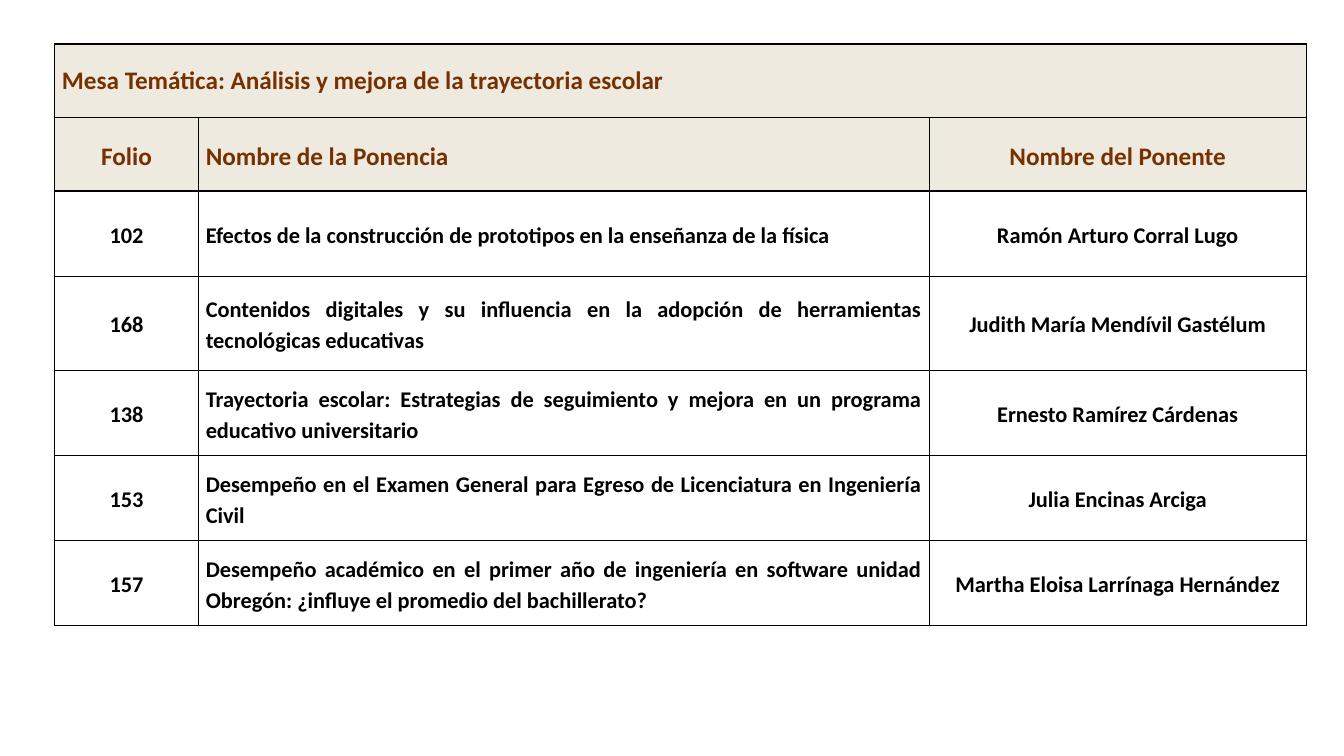
from lxml import etree
from pptx import Presentation
from pptx import util as u
from pptx.dml import color
from pptx.enum import text
from pptx.oxml import ns

EMU_PER_PX = 9525
COLUMN_WIDTHS = [137, 696, 359]
ROW_HEIGHTS = [70, 70, 81, 90, 81, 81, 81]
ALIGNMENTS = [text.PP_ALIGN.CENTER, text.PP_ALIGN.JUSTIFY, text.PP_ALIGN.CENTER]
HEADER = {"size": 18, "color": "773000", "fill": "EFEADF", "spacing": 1.15}
BODY = {"size": 16, "color": "000000", "fill": None, "spacing": 1.14}

TOPIC = "Mesa Temática: Análisis y mejora de la trayectoria escolar"
HEADINGS = ("Folio", "Nombre de la Ponencia", "Nombre del Ponente")
TALKS = [
    ("102", "Efectos de la construcción de prototipos en la enseñanza de la física",
     "Ramón Arturo Corral Lugo"),
    ("168", "Contenidos digitales y su influencia en la adopción de herramientas "
     "tecnológicas educativas", "Judith María Mendívil Gastélum"),
    ("138", "Trayectoria escolar: Estrategias de seguimiento y mejora en un programa "
     "educativo universitario", "Ernesto Ramírez Cárdenas"),
    ("153", "Desempeño en el Examen General para Egreso de Licenciatura en Ingeniería Civil",
     "Julia Encinas Arciga"),
    ("157", "Desempeño académico en el primer año de ingeniería en software unidad "
     "Obregón: ¿influye el promedio del bachillerato?",
     "Martha Eloisa Larrínaga Hernández"),
]


def px(n):
    return u.Emu(n * EMU_PER_PX)


def rgb(value):
    return color.RGBColor.from_string(value)


def set_attributes(target, values):
    for name, value in values.items():
        setattr(target, name, value)


def add_borders(cell, line_color):
    props = cell._tc.get_or_add_tcPr()
    for i, side in enumerate(("lnL", "lnR", "lnT", "lnB")):
        line = etree.Element(ns.qn(f"a:{side}"), w=str(u.Pt(1)))
        fill = etree.SubElement(line, ns.qn("a:solidFill"))
        etree.SubElement(fill, ns.qn("a:srgbClr"), val=line_color)
        props.insert(i, line)


def format_cell(cell, style):
    set_attributes(cell, {
        "vertical_anchor": text.MSO_ANCHOR.MIDDLE,
        "margin_left": px(7), "margin_right": px(7),
        "margin_top": 0, "margin_bottom": 0,
    })
    if style["fill"]:
        cell.fill.solid()
        cell.fill.fore_color.rgb = rgb(style["fill"])
    else:
        cell.fill.background()
    add_borders(cell, "000000")


def write_cell(cell, words, style, alignment, spacing):
    p = cell.text_frame.paragraphs[0]
    set_attributes(p, {"alignment": alignment, "line_spacing": spacing})
    r = p.add_run()
    r.text = words
    set_attributes(r.font, {"name": "Calibri", "size": u.Pt(style["size"]), "bold": True})
    r.font.color.rgb = rgb(style["color"])


def add_program(s):
    frame = s.shapes.add_table(
        len(ROW_HEIGHTS), len(COLUMN_WIDTHS), px(52), px(42),
        px(sum(COLUMN_WIDTHS)), px(sum(ROW_HEIGHTS)))
    table = frame.table
    set_attributes(table, {"first_row": False, "horz_banding": False})
    for column, width in zip(table.columns, COLUMN_WIDTHS):
        column.width = px(width)
    for i, (row, height) in enumerate(zip(table.rows, ROW_HEIGHTS)):
        row.height = px(height)
        for cell in row.cells:
            format_cell(cell, HEADER if i < 2 else BODY)

    topic = table.cell(0, 0)
    topic.merge(table.cell(0, 2))
    write_cell(topic, TOPIC, HEADER, text.PP_ALIGN.JUSTIFY, None)
    for i, entries in enumerate([HEADINGS, *TALKS], start=1):
        style = HEADER if i == 1 else BODY
        for j, words in enumerate(entries):
            write_cell(table.cell(i, j), words, style, ALIGNMENTS[j], style["spacing"])


def main():
    prs = Presentation()
    set_attributes(prs, {"slide_width": px(1280), "slide_height": px(720)})
    s = prs.slides.add_slide(prs.slide_layouts[6])
    add_program(s)
    prs.save("out.pptx")


if __name__ == "__main__":
    main()
